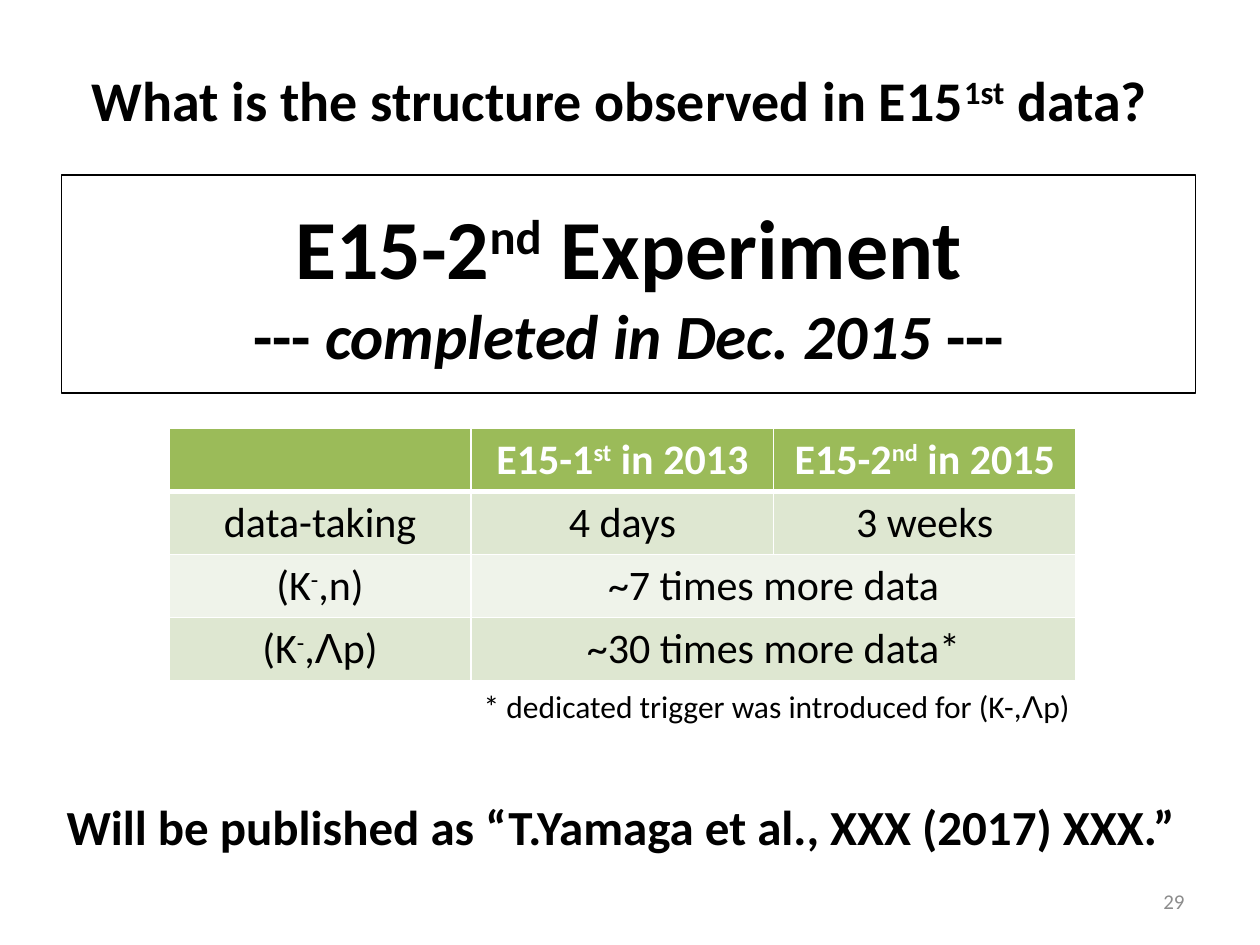
"""Build the slide on the second E15 experiment."""
from lxml.etree import SubElement
from pptx import Presentation
from pptx.dml.color import RGBColor
from pptx.enum.shapes import MSO_SHAPE
from pptx.enum.text import MSO_ANCHOR, PP_ALIGN
from pptx.oxml.ns import qn
from pptx.util import Inches, Pt

BLACK = RGBColor(0, 0, 0)
WHITE = RGBColor(255, 255, 255)
GRAY = RGBColor(0x8C, 0x8C, 0x8C)
GREEN = RGBColor(0x9B, 0xBB, 0x59)
BANDS = RGBColor(0xDE, 0xE7, 0xD1), RGBColor(0xEF, 0xF3, 0xEA)

HEAD = [("E15-2|^nd| Experiment", 48), ("--- |/completed in Dec. 2015 |---", 36)]
NOTES = [
    ("What is the structure observed in E15|^1st| data?", 32, True, (0.63, 0.47, 8.7, 0.64)),
    ("* dedicated trigger was introduced for (K-,|Λ|p)", 18, False, (3.74, 5.4, 4.92, 0.4)),
    ("Will be published as “T.Yamaga et al., XXX (2017) XXX.”", 28, True, (0.43, 6.27, 9.13, 0.57)),
]
PAGE = "29"
ROWS = [
    ["", "E15-1|^st| in 2013", "E15-2|^nd| in 2015"],
    ["data-taking", "4 days", "3 weeks"],
    ["(K|^-|,n)", "~7 times more data"],
    ["(K|^-|,|Λ|p)", "~30 times more data*"],
]
COL, ROW = 2.4, 0.5


def write(para, text, size, color=BLACK, bold=False):
    """Add runs split at bars; ^ marks superscript and / marks italics."""
    for part in filter(None, text.split("|")):
        run = para.add_run()
        run.text = part.lstrip("^/")
        font = run.font
        font.name = "Arial" if part == "Λ" else "Calibri"
        font.size, font.bold, font.color.rgb = Pt(size), bold, color
        font.italic = part.startswith("/")
        if part.startswith("^"):
            font._element.set("baseline", "30000")


def add_text(slide, place, text, size, color=BLACK, bold=False):
    """Add a text box of one line and return its frame."""
    frame = slide.shapes.add_textbox(*map(Inches, place)).text_frame
    frame.word_wrap = False
    write(frame.paragraphs[0], text, size, color, bold)
    return frame


def add_head(slide):
    """Add the framed title."""
    box = slide.shapes.add_shape(MSO_SHAPE.RECTANGLE, *map(Inches, (0.49, 1.39, 9, 1.73)))
    box.shadow.inherit = False
    box.fill.background()
    box.line.color.rgb, box.line.width = BLACK, Pt(0.75)
    frame = box.text_frame
    frame.vertical_anchor = MSO_ANCHOR.MIDDLE
    para = frame.paragraphs[0]
    para.alignment = PP_ALIGN.CENTER
    for i, (text, size) in enumerate(HEAD):
        if i:
            para.add_line_break()
        write(para, text, size, bold=True)


def paint(cell, color, base):
    """Give a cell white borders and a fill."""
    props = cell._tc.get_or_add_tcPr()
    for side, width in zip("LRTB", (1, 1, 1, base)):
        line = SubElement(props, qn(f"a:ln{side}"), w=str(Pt(width)))
        fill = SubElement(line, qn("a:solidFill"))
        SubElement(fill, qn("a:srgbClr"), val=str(WHITE))
    cell.fill.solid()
    cell.fill.fore_color.rgb = color


def add_grid(slide):
    """Add the table that compares both runs."""
    count = len(ROWS[0])
    place = map(Inches, (1.34, 3.4, COL * count, ROW * len(ROWS)))
    table = slide.shapes.add_table(len(ROWS), count, *place).table
    for r, row in enumerate(ROWS):
        top = r == 0
        for c in range(count):
            paint(table.cell(r, c), GREEN if top else BANDS[(r - 1) % 2], 3 if top else 1)
        if len(row) < count:
            table.cell(r, len(row) - 1).merge(table.cell(r, count - 1))
        for c, text in enumerate(row):
            para = table.cell(r, c).text_frame.paragraphs[0]
            para.alignment = PP_ALIGN.CENTER
            write(para, text, 24, WHITE if top else BLACK, top)


def main():
    """Build and save the slide."""
    deck = Presentation()
    deck.slide_width, deck.slide_height = Inches(10), Inches(7.5)
    slide = deck.slides.add_slide(deck.slide_layouts[6])
    add_head(slide)
    page = add_text(slide, (7.17, 6.95, 2.33, 0.4), PAGE, 12, GRAY)
    page.word_wrap = True
    page.vertical_anchor = MSO_ANCHOR.MIDDLE
    page.paragraphs[0].alignment = PP_ALIGN.RIGHT
    add_grid(slide)
    for text, size, bold, place in NOTES:
        add_text(slide, place, text, size, bold=bold)
    deck.save("out.pptx")


if __name__ == "__main__":
    main()
